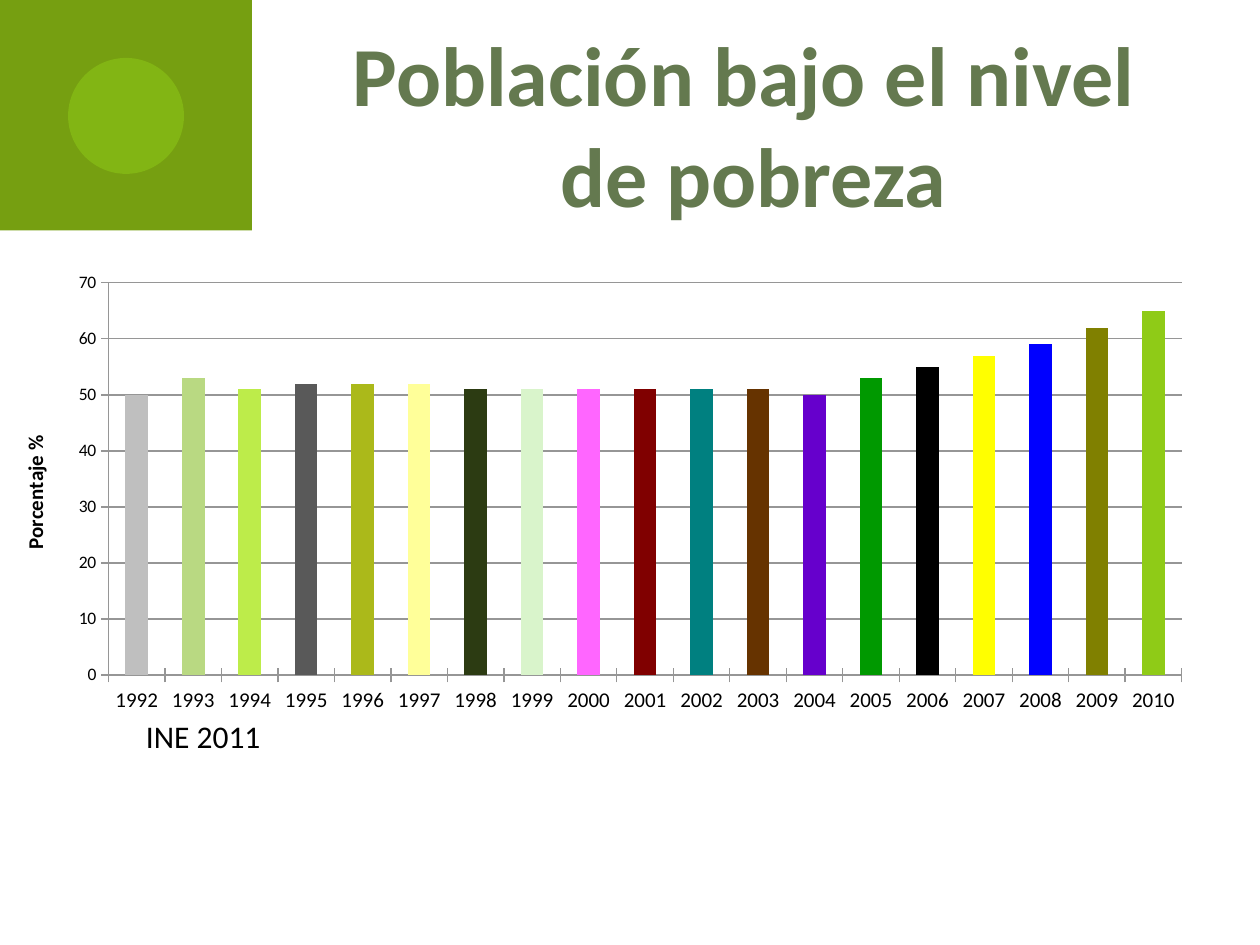
from lxml import etree
from pptx import Presentation
from pptx.chart.data import CategoryChartData
from pptx.dml.color import RGBColor
from pptx.enum.chart import XL_CHART_TYPE as ChartType, XL_TICK_MARK as TickMark
from pptx.enum.shapes import MSO_SHAPE as Shape
from pptx.enum.text import MSO_AUTO_SIZE as AutoSize, PP_ALIGN as Align
from pptx.oxml.ns import qn
from pptx.util import Inches, Pt

POVERTY = [50, 53, 51, 52, 52, 52, 51, 51, 51, 51, 51, 51, 50, 53, 55, 57, 59, 62, 65]
YEARS = [str(1992 + index) for index in range(len(POVERTY))]
BAR_COLOURS = [
    "BFBFBF", "B9D982", "BDEC4A", "595959", "ABB91A", "FFFF99", "2C3B12",
    "D9F4CB", "FF66FF", "800000", "008080", "663300", "6600CC", "009900",
    "000000", "FFFF00", "0000FF", "808000", "8FCB17",
]
PLOT_AREA = {"x": 0.09, "y": 0.04, "w": 0.89, "h": 0.86}


def colour(value):
    return RGBColor.from_string(value)


class SlideBuilder:
    font = "Calibri"
    ink = "000000"
    grid = "969696"

    def __init__(self, page):
        self.page = page

    def style(self, font, size, value=None, bold=False):
        font.name = self.font
        font.size = Pt(size)
        font.bold = bold
        font.color.rgb = colour(value or self.ink)

    def shape(self, kind, bounds, fill, opacity=100):
        shape = self.page.shapes.add_shape(kind, *map(Inches, bounds))
        shape.shadow.inherit = False
        shape.fill.solid()
        shape.fill.fore_color.rgb = colour(fill)
        shape.line.fill.background()
        if opacity < 100:
            tone = shape.fill._xPr.find(".//" + qn("a:srgbClr"))
            etree.SubElement(tone, qn("a:alpha"), val=str(opacity * 1000))

    def text(self, bounds, lines, size, value=None, bold=False, align=Align.LEFT, wrap=True):
        box = self.page.shapes.add_textbox(*map(Inches, bounds))
        frame = box.text_frame
        frame.word_wrap = wrap
        frame.auto_size = AutoSize.SHAPE_TO_FIT_TEXT
        frame.text = "\n".join(lines)
        for para in frame.paragraphs:
            para.alignment = align
            for span in para.runs:
                self.style(span.font, size, value, bold)

    def axis(self, axis, size):
        axis.major_tick_mark = TickMark.CROSS
        axis.format.line.color.rgb = colour(self.grid)
        self.style(axis.tick_labels.font, size)

    def column_chart(self, bounds, categories, values, colours, axis_title):
        data = CategoryChartData()
        data.categories = categories
        data.add_series("Series 1", values)
        chart = self.page.shapes.add_chart(
            ChartType.COLUMN_CLUSTERED, *map(Inches, bounds), data
        ).chart
        self.style(chart.font, 10)
        chart.has_legend = False
        chart.has_title = False
        self.axis(chart.category_axis, 12)
        scale = chart.value_axis
        self.axis(scale, 10)
        scale.minimum_scale, scale.maximum_scale, scale.major_unit = 0, 70, 10
        scale.has_major_gridlines = True
        scale.major_gridlines.format.line.color.rgb = colour(self.grid)
        title = scale.axis_title.text_frame
        title.text = axis_title
        self.style(title.paragraphs[0].runs[0].font, 12, bold=True)

        plot = chart.plots[0]
        plot.gap_width = 150
        plot.vary_by_categories = False
        series = plot.series[0]
        series.format.fill.solid()
        series.format.fill.fore_color.rgb = colour(colours[-1])
        for index, value in enumerate(colours[:-1]):
            fill = series.points[index].format.fill
            fill.solid()
            fill.fore_color.rgb = colour(value)
        self.place_plot(chart)

    def place_plot(self, chart):
        area = chart._chartSpace.chart.plotArea
        for old in area.findall(qn("c:layout")):
            area.remove(old)
        layout = etree.Element(qn("c:layout"))
        area.insert(0, layout)
        manual = etree.SubElement(layout, qn("c:manualLayout"))
        settings = {"layoutTarget": "inner", "xMode": "edge", "yMode": "edge", **PLOT_AREA}
        for name, value in settings.items():
            etree.SubElement(manual, qn("c:" + name), val=str(value))


def main():
    deck = Presentation()
    deck.slide_width, deck.slide_height = Inches(10), Inches(7.5)
    slide = SlideBuilder(deck.slides.add_slide(deck.slide_layouts[6]))
    slide.shape(Shape.RECTANGLE, (0, 0, 2, 1.83), "769F11")
    slide.shape(Shape.OVAL, (0.54, 0.46, 0.92, 0.92), "8FCB17", opacity=50)
    slide.text(
        (2.67, 0.13, 6.62, 1.72), ["Población bajo el nivel ", "de pobreza"],
        48, "64794F", bold=True, align=Align.CENTER, wrap=False,
    )
    slide.column_chart((0, 2.1, 9.57, 3.62), YEARS, POVERTY, BAR_COLOURS, "Porcentaje %")
    slide.text((1.06, 5.64, 1.18, 0.4), ["INE 2011"], 18)
    deck.save("out.pptx")


if __name__ == "__main__":
    main()
